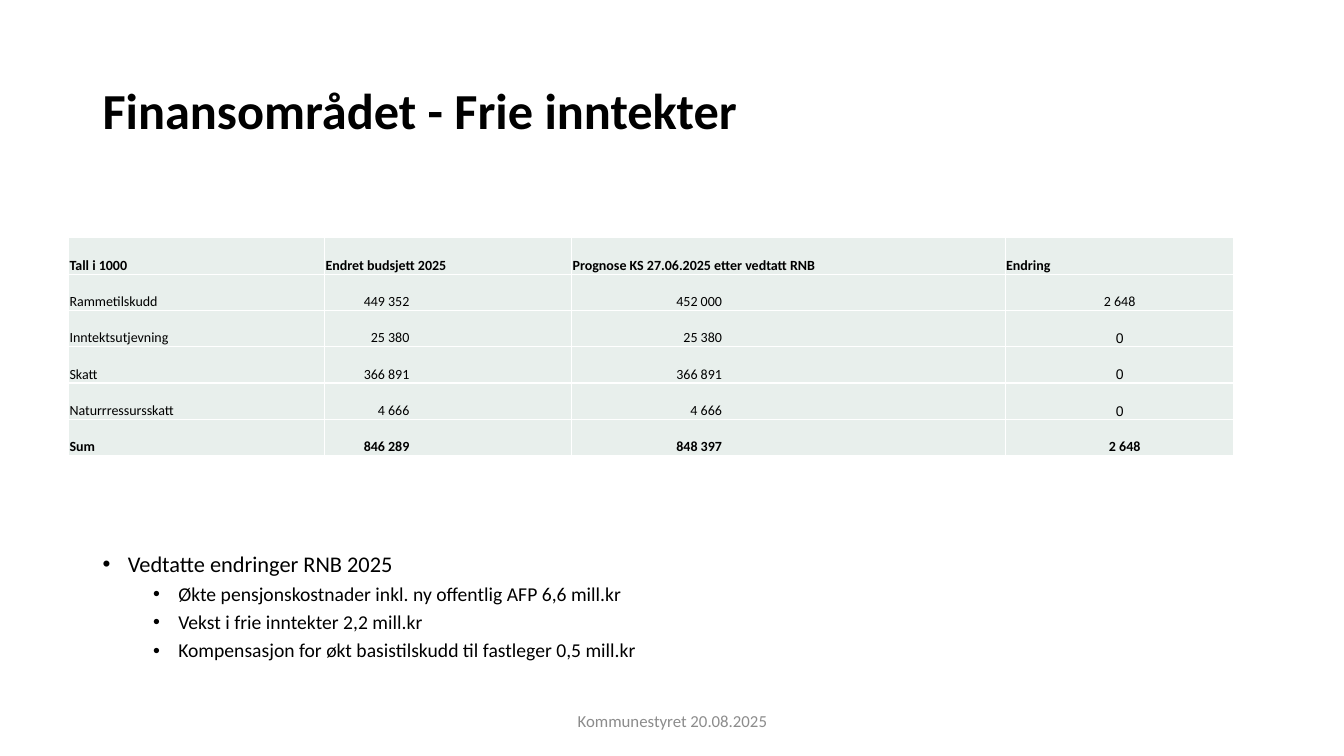
from lxml import etree
from pptx import Presentation
from pptx.dml.color import RGBColor
from pptx.enum import text
from pptx.oxml import ns
from pptx.util import Inches, Pt

BLACK = RGBColor(0x00, 0x00, 0x00)
GREY = RGBColor(0x8C, 0x8C, 0x8C)
PALE_GREEN = RGBColor(0xE8, 0xEF, 0xEC)
WHITE = RGBColor(0xFF, 0xFF, 0xFF)
LEFT, CENTER, RIGHT = text.PP_ALIGN.LEFT, text.PP_ALIGN.CENTER, text.PP_ALIGN.RIGHT


def add_text(paragraph, words, size, color=BLACK, bold=False, name="Calibri"):
    run = paragraph.add_run()
    run.text = words
    run.font.color.rgb = color
    font_format = {"size": Pt(size), "bold": bold, "name": name}
    for attribute, value in font_format.items():
        setattr(run.font, attribute, value)


def add_box(left, top, width, height, anchor):
    box = slide.shapes.add_textbox(Inches(left), Inches(top), Inches(width), Inches(height))
    box.text_frame.word_wrap = True
    box.text_frame.vertical_anchor = anchor
    return box.text_frame


presentation = Presentation()
presentation.slide_width = Inches(13.33)
presentation.slide_height = Inches(7.5)
slide = presentation.slides.add_slide(presentation.slide_layouts[6])

# Title
title = add_box(0.92, 0.4, 11.5, 1.45, text.MSO_ANCHOR.MIDDLE).paragraphs[0]
title.line_spacing = 0.9
add_text(title, "Finansområdet - Frie inntekter", 36, bold=True)

# Footer
footer = add_box(4.42, 6.95, 4.5, 0.4, text.MSO_ANCHOR.MIDDLE).paragraphs[0]
footer.alignment = CENTER
add_text(footer, "Kommunestyret 20.08.2025", 12, GREY)

# Bullets: level, size, space before, words
bullets = [
    (0, 16, 0, "Vedtatte endringer RNB 2025"),
    (1, 14, 5, "Økte pensjonskostnader inkl. ny offentlig AFP 6,6 mill.kr"),
    (1, 14, 5, "Vekst i frie inntekter 2,2 mill.kr"),
    (1, 14, 5, "Kompensasjon for økt basistilskudd til fastleger 0,5 mill.kr"),
]
bullet_frame = add_box(0.92, 5.44, 11.5, 1.32, text.MSO_ANCHOR.TOP)
for index, (level, size, space, words) in enumerate(bullets):
    paragraph = bullet_frame.add_paragraph() if index else bullet_frame.paragraphs[0]
    properties = paragraph._p.get_or_add_pPr()
    properties.set("marL", str(Inches(0.25 + 0.5 * level)))
    properties.set("indent", str(Inches(-0.25)))
    etree.SubElement(properties, ns.qn("a:buFont"), typeface="Arial")
    etree.SubElement(properties, ns.qn("a:buChar"), char="•")
    paragraph_format = {"level": level, "line_spacing": 0.9, "space_before": Pt(space)}
    for attribute, value in paragraph_format.items():
        setattr(paragraph, attribute, value)
    add_text(paragraph, words, size)

# Budget table
budget = [
    ("Tall i 1000", "Endret budsjett 2025", "Prognose KS 27.06.2025 etter vedtatt RNB", "Endring"),
    ("Rammetilskudd", "449 352", "452 000", "2 648"),
    ("Inntektsutjevning", "25 380", "25 380", "0"),
    ("Skatt", "366 891", "366 891", "0"),
    ("Naturrressursskatt", "4 666", "4 666", "0"),
    ("Sum", "846 289", "848 397", "2 648"),
]
column_widths = [2.54, 2.45, 4.3, 2.27]
alignments = [LEFT, RIGHT, RIGHT, CENTER]
right_margins = [0.01, 1.61, 2.81, 0.01]
last_row = len(budget) - 1

frame = slide.shapes.add_table(len(budget), len(column_widths), Inches(0.68), Inches(2.36),
                               Inches(sum(column_widths)), Inches(0.36 * len(budget)))
table = frame.table
for column, width in zip(table.columns, column_widths):
    column.width = Inches(width)

for row_index, row in enumerate(budget):
    table.rows[row_index].height = Inches(0.36)
    header = row_index == 0
    for column_index, words in enumerate(row):
        cell = table.cell(row_index, column_index)
        shifted_sum = row_index == last_row and column_index == 3
        cell_format = {
            "vertical_anchor": text.MSO_ANCHOR.BOTTOM,
            "margin_left": Inches(0.11 if shifted_sum else 0.01),
            "margin_right": Inches(0.01 if header else right_margins[column_index]),
            "margin_top": Inches(0.01),
            "margin_bottom": 0,
        }
        for attribute, value in cell_format.items():
            setattr(cell, attribute, value)

        # White borders come before the fill in the cell properties
        for side in ("lnL", "lnR", "lnT", "lnB"):
            line = etree.SubElement(cell._tc.get_or_add_tcPr(), ns.qn("a:" + side), w=str(Pt(1)))
            fill = etree.SubElement(line, ns.qn("a:solidFill"))
            etree.SubElement(fill, ns.qn("a:srgbClr"), val=str(WHITE))
        cell.fill.solid()
        cell.fill.fore_color.rgb = PALE_GREEN

        paragraph = cell.text_frame.paragraphs[0]
        paragraph.alignment = LEFT if header else alignments[column_index]
        add_text(paragraph, words, 10, bold=row_index in (0, last_row),
                 name="Arial" if words == "0" else "Calibri")

presentation.save("out.pptx")
